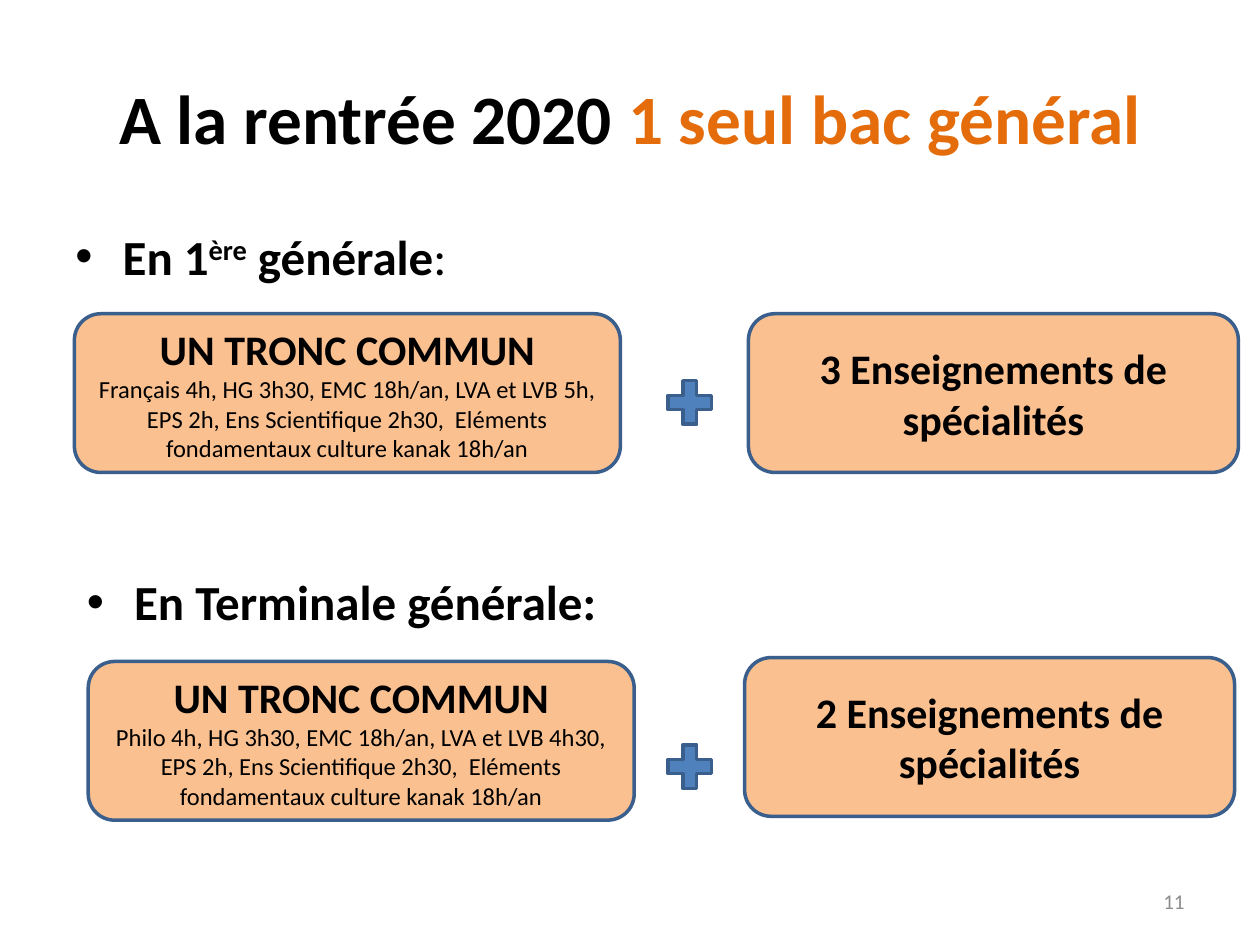
from dataclasses import dataclass

from lxml.etree import SubElement
from pptx import Presentation
from pptx.dml.color import RGBColor
from pptx.enum.shapes import MSO_SHAPE
from pptx.enum.text import MSO_ANCHOR, MSO_AUTO_SIZE, PP_ALIGN
from pptx.oxml.ns import qn
from pptx.util import Pt

COLORS = {
    "black": "000000",
    "orange": "E46C0A",
    "peach": "FAC090",
    "blue": "4F81BD",
    "edge": "3A5F8C",
    "gray": "8C8C8C",
}
FONT = "Calibri"


@dataclass
class Run:
    text: str
    size: float
    bold: bool = True
    color: str = "black"
    raised: bool = False


@dataclass
class Box:
    left: float
    top: float
    width: float
    height: float


@dataclass
class Level:
    head: list[Run]
    head_box: Box
    core: str
    core_box: Box
    plus_box: Box
    choice: str
    choice_box: Box


def tint(name: str) -> RGBColor:
    return RGBColor.from_string(COLORS[name])


def place(box: Box) -> tuple[Pt, Pt, Pt, Pt]:
    return Pt(box.left), Pt(box.top), Pt(box.width), Pt(box.height)


def write(para, runs: list[Run], align: PP_ALIGN) -> None:
    para.alignment = align
    for item in runs:
        run = para.add_run()
        run.text = item.text
        font = run.font
        font.name = FONT
        font.size = Pt(item.size)
        font.bold = item.bold
        font.color.rgb = tint(item.color)
        if item.raised:
            font._element.set("baseline", "30000")


def add_text(slide, box: Box, runs: list[Run], align: PP_ALIGN, anchor: MSO_ANCHOR):
    frame = slide.shapes.add_textbox(*place(box)).text_frame
    frame.word_wrap = True
    frame.vertical_anchor = anchor
    write(frame.paragraphs[0], runs, align)
    return frame.paragraphs[0]


def add_head(slide, box: Box, runs: list[Run]) -> None:
    para = add_text(slide, box, runs, PP_ALIGN.LEFT, MSO_ANCHOR.TOP)
    para.space_before = Pt(5.6)
    props = para._p.get_or_add_pPr()
    props.set("marL", str(Pt(27)))
    props.set("indent", str(Pt(-27)))
    SubElement(props, qn("a:buFont")).set("typeface", "Arial")
    SubElement(props, qn("a:buChar")).set("char", "•")


def add_form(slide, kind: MSO_SHAPE, box: Box, fill: str):
    form = slide.shapes.add_shape(kind, *place(box))
    form.shadow.inherit = False
    form.fill.solid()
    form.fill.fore_color.rgb = tint(fill)
    form.line.color.rgb = tint("edge")
    form.line.width = Pt(2)
    return form


def add_card(slide, box: Box, paras: list[Run]) -> None:
    frame = add_form(slide, MSO_SHAPE.ROUNDED_RECTANGLE, box, "peach").text_frame
    frame.word_wrap = True
    frame.vertical_anchor = MSO_ANCHOR.MIDDLE
    for index, run in enumerate(paras):
        para = frame.add_paragraph() if index else frame.paragraphs[0]
        write(para, [run], PP_ALIGN.CENTER)


def add_level(slide, level: Level) -> None:
    add_head(slide, level.head_box, level.head)
    add_card(slide, level.core_box,
             [Run("UN TRONC COMMUN", 24), Run(level.core, 14, False)])
    add_form(slide, MSO_SHAPE.MATH_PLUS, level.plus_box, "blue")
    add_card(slide, level.choice_box, [Run(level.choice, 24)])


SHARED = "EPS 2h, Ens Scientifique 2h30,  Eléments fondamentaux culture kanak 18h/an"
LEVELS = [
    Level(
        [Run("En 1", 28), Run("ère", 28, raised=True),
         Run(" générale", 28), Run(":", 28, False)],
        Box(36, 126, 630, 161.3),
        "Français 4h, HG 3h30, EMC 18h/an, LVA et LVB 5h, " + SHARED,
        Box(42.5, 179.3, 312, 90.7),
        Box(377.3, 213.1, 33.8, 33.8),
        "3 Enseignements de spécialités",
        Box(427.7, 179.3, 280, 90.7),
    ),
    Level(
        [Run("En Terminale générale:", 28)],
        Box(42.5, 323.3, 630, 161.3),
        "Philo 4h, HG 3h30, EMC 18h/an, LVA et LVB 4h30, " + SHARED,
        Box(50.4, 378, 312, 90.7),
        Box(377.3, 421.2, 33.8, 33.8),
        "2 Enseignements de spécialités",
        Box(425.5, 375.8, 280, 90.7),
    ),
]


def main() -> None:
    deck = Presentation()
    deck.slide_width, deck.slide_height = Pt(720), Pt(540)
    slide = deck.slides.add_slide(deck.slide_layouts[5])
    title = slide.shapes.title
    title.left, title.top, title.width, title.height = place(Box(36, 21.6, 648, 90))
    frame = title.text_frame
    frame.auto_size = MSO_AUTO_SIZE.NONE
    frame.vertical_anchor = MSO_ANCHOR.MIDDLE
    write(frame.paragraphs[0],
          [Run("A la rentrée 2020 ", 39.6),
           Run("1 seul bac général", 39.6, color="orange")],
          PP_ALIGN.CENTER)
    for level in LEVELS:
        add_level(slide, level)
    add_text(slide, Box(516, 500.5, 168, 28.8), [Run("11", 12, False, "gray")],
             PP_ALIGN.RIGHT, MSO_ANCHOR.MIDDLE)
    deck.save("out.pptx")


if __name__ == "__main__":
    main()
